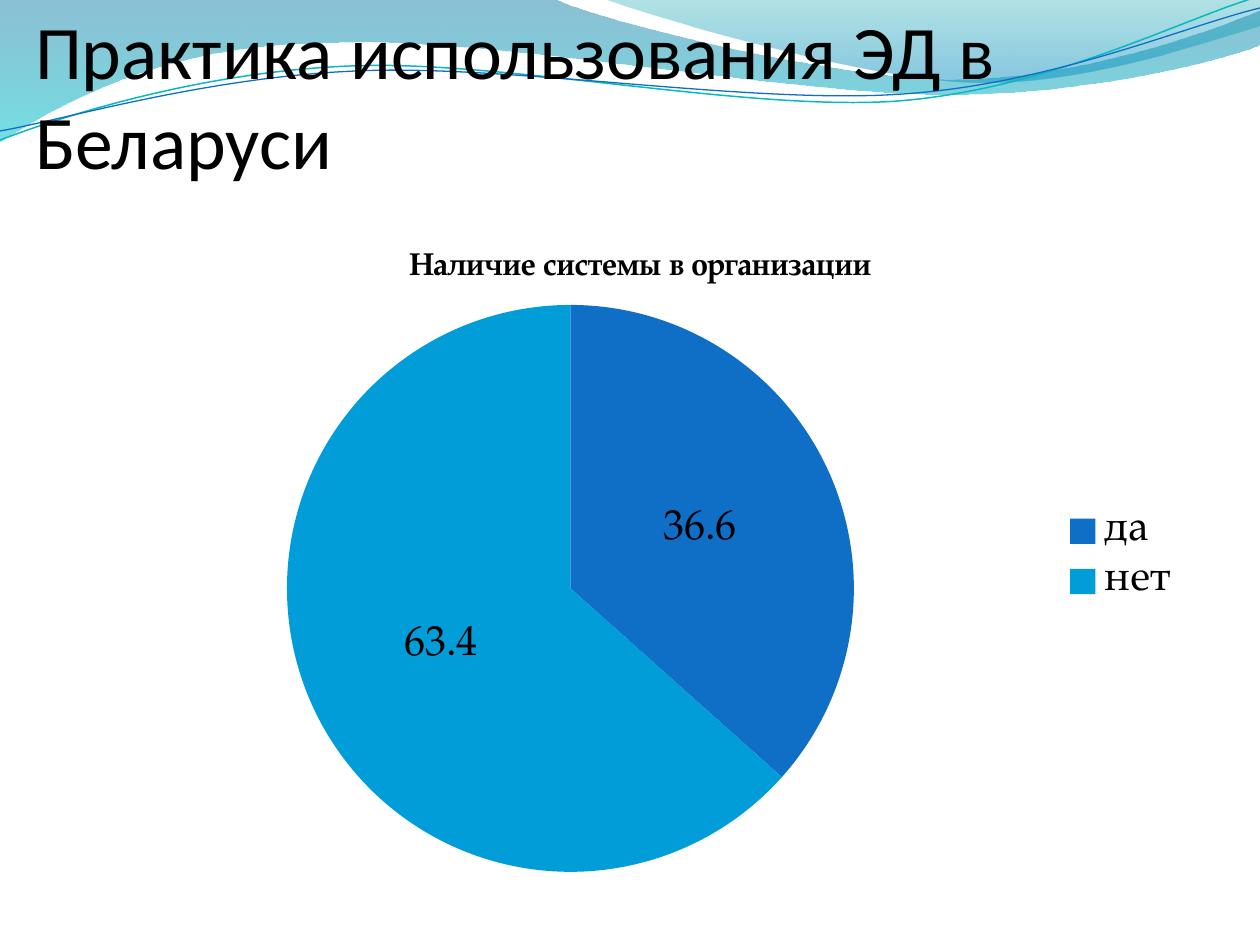
from dataclasses import dataclass

from lxml import etree
from pptx import Presentation, util as u
from pptx.chart import data as chart_data
from pptx.dml import color
from pptx.enum import chart as chart_enum, text
from pptx.oxml import ns

PX = 914400 // 126


@dataclass(frozen=True)
class Theme:
    title_font: str = "Calibri"
    chart_font: str = "TeX Gyre Pagella"
    ink: str = "000000"
    yes: str = "0F6FC6"
    no: str = "009DD9"
    teal_line: str = "0AB8BF"
    title_size: float = 43.2
    chart_title_size: int = 18
    chart_size: int = 24


THEME = Theme()

WAVES = [
    ((0, -1),
     [[(554, -1)], [(600, 21), (837, 79), (955, 79)],
      [(1075, 79), (1207, 33), (1260, 11)], [(1261, 45)],
      [(1238, 55), (1096, 96), (940, 94)], [(784, 94), (481, 35), (324, 43)],
      [(163, 44), (58, 105), (-1, 142)]],
     [(0, "0074A1", 45), (1, "00C6CF", 55)]),
    ((604, -1),
     [[(641, 14), (859, 78), (969, 82)], [(1079, 87), (1211, 40), (1260, 26)],
      [(1260, 0)]],
     [(0, "00A1A9", 30), (0.8, "008BBF", 45)]),
]

RIPPLES = [
    ((0, 140),
     [[(60, 117), (199, 72), (349, 66)], [(498, 59), (747, 112), (898, 101)],
      [(1050, 89), (1182, 19), (1257, -3)]],
     THEME.teal_line, 0.85),
    ((0, 131),
     [[(59, 121), (206, 77), (357, 71)], [(508, 64), (752, 105), (903, 94)],
      [(1053, 84), (1185, 26), (1260, 8)]],
     THEME.yes, 0.75),
]


def rgb(value):
    return color.RGBColor.from_string(value)


def emu(box):
    return [value * PX for value in box]


def style_font(font, name, size, bold=False):
    font.name = name
    font.size = u.Pt(size)
    font.bold = bold
    font.color.rgb = rgb(THEME.ink)


def bend_segments(shape, segments):
    lines = iter(shape.element.xpath(".//a:path/a:lnTo"))
    for segment in segments:
        steps = [next(lines) for _ in segment]
        if len(steps) == 3:
            curve = etree.Element(ns.qn("a:cubicBezTo"))
            steps[0].addprevious(curve)
            for step in steps:
                curve.append(step[0])
                step.getparent().remove(step)


def add_outline(shapes, box, start, segments, close):
    left, top, _, _ = box

    def place(point):
        return (left + point[0]) * PX, (top + point[1]) * PX

    builder = shapes.build_freeform(*place(start))
    points = [place(point) for segment in segments for point in segment]
    builder.add_line_segments(points, close=close)
    shape = builder.convert_to_shape()
    shape.shadow.inherit = False
    bend_segments(shape, segments)
    return shape


def fill_gradient(shape, stops):
    shape.fill.gradient()
    shape.fill.gradient_angle = 270
    for stop, (position, value, _) in zip(shape.fill.gradient_stops, stops):
        stop.position = position
        stop.color.rgb = rgb(value)
    colors = shape.element.xpath(".//a:gsLst//a:srgbClr")
    for element, (_, _, opacity) in zip(colors, stops):
        etree.SubElement(element, ns.qn("a:alpha"), val=str(opacity * 1000))


def add_waves(slide, box):
    for start, segments, stops in WAVES:
        wave = add_outline(slide.shapes, box, start, segments, True)
        fill_gradient(wave, stops)
        wave.line.fill.background()
    group = slide.shapes.add_group_shape()
    for start, segments, line_color, width in RIPPLES:
        ripple = add_outline(group.shapes, box, start, segments, False)
        ripple.fill.background()
        ripple.line.color.rgb = rgb(line_color)
        ripple.line.width = u.Pt(width)


def add_title(slide, box):
    frame = slide.shapes.add_textbox(*emu(box)).text_frame
    frame.word_wrap = True
    frame.vertical_anchor = text.MSO_ANCHOR.BOTTOM
    frame.margin_left = frame.margin_right = frame.margin_bottom = 0
    frame.margin_top = 6 * PX
    paragraph = frame.paragraphs[0]
    paragraph.text = "Практика использования ЭД в Беларуси"
    style_font(paragraph.font, THEME.title_font, THEME.title_size)


def set_plot_layout(chart, box, plot_box):
    _, _, width, height = box
    plot_area = chart.element.xpath(".//c:plotArea")[0]
    for layout in plot_area.findall(ns.qn("c:layout")):
        plot_area.remove(layout)
    layout = etree.Element(ns.qn("c:layout"))
    manual = etree.SubElement(layout, ns.qn("c:manualLayout"))
    settings = {"layoutTarget": "inner", "xMode": "edge", "yMode": "edge"}
    for name, value, whole in zip("xywh", plot_box, (width, height) * 2):
        settings[name] = value / whole
    for name, value in settings.items():
        etree.SubElement(manual, ns.qn(f"c:{name}"), val=str(value))
    plot_area.insert(0, layout)


def add_pie(slide, box):
    data = chart_data.CategoryChartData()
    data.categories = ["да", "нет"]
    data.add_series("Series 1", (36.6, 63.4))
    chart = slide.shapes.add_chart(
        chart_enum.XL_CHART_TYPE.PIE, *emu(box), data).chart
    style_font(chart.font, THEME.chart_font, THEME.chart_size)

    chart.has_title = True
    paragraph = chart.chart_title.text_frame.paragraphs[0]
    paragraph.text = "Наличие системы в организации"
    style_font(paragraph.font, THEME.chart_font, THEME.chart_title_size, True)
    chart.chart_title.include_in_layout = False

    chart.has_legend = True
    chart.legend.position = chart_enum.XL_LEGEND_POSITION.RIGHT
    chart.legend.include_in_layout = False
    style_font(chart.legend.font, THEME.chart_font, THEME.chart_size)

    plot = chart.plots[0]
    plot.vary_by_categories = True
    plot.has_data_labels = True
    labels = plot.data_labels
    labels.show_value = True
    labels.show_percentage = False
    labels.position = chart_enum.XL_LABEL_POSITION.CENTER
    style_font(labels.font, THEME.chart_font, THEME.chart_size)
    for index, value in enumerate((THEME.yes, THEME.no)):
        fill = plot.series[0].points[index].format.fill
        fill.solid()
        fill.fore_color.rgb = rgb(value)
    set_plot_layout(chart, box, (202, 81, 567, 567))


def main():
    presentation = Presentation()
    presentation.slide_width = 1260 * PX
    presentation.slide_height = 945 * PX
    slide = presentation.slides.add_slide(presentation.slide_layouts[6])
    add_waves(slide, (0, 0, 1260, 142))
    add_title(slide, (35, 76, 1244, 109))
    add_pie(slide, (85, 224, 1111, 665))
    presentation.save("out.pptx")


if __name__ == "__main__":
    main()
